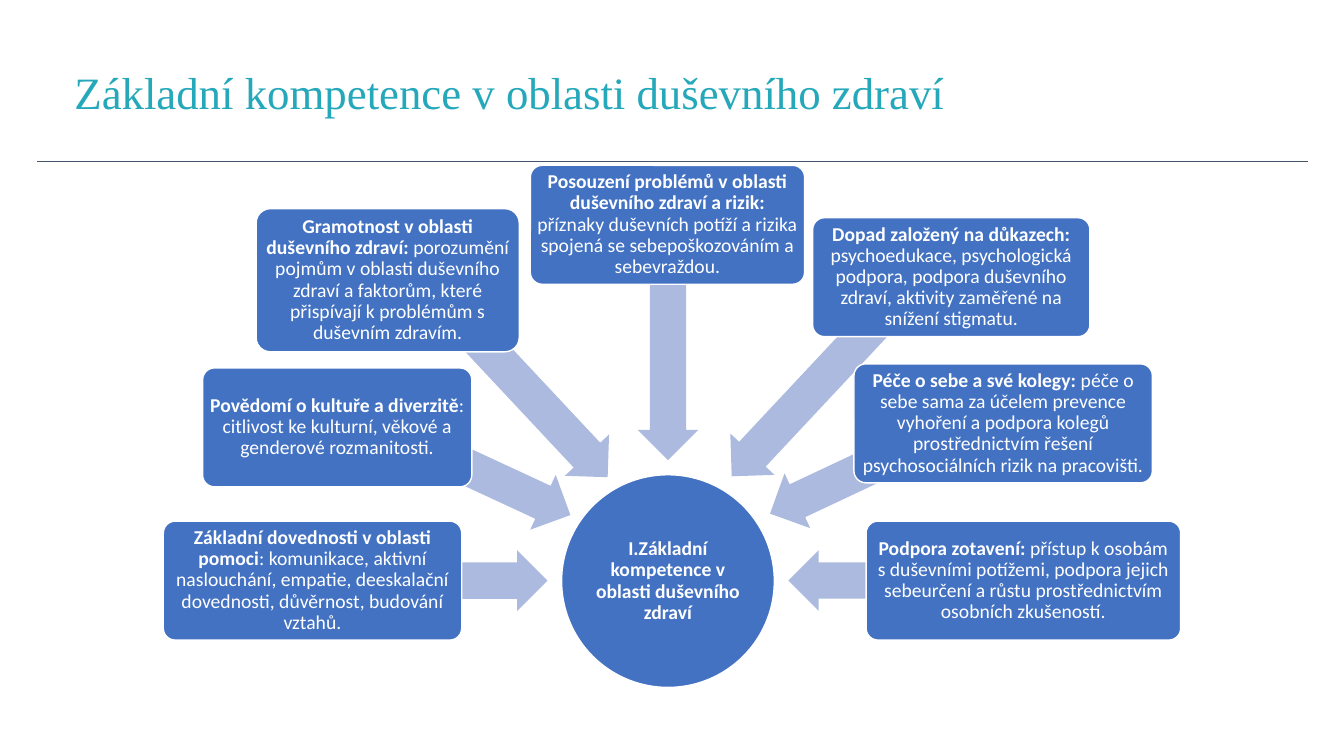
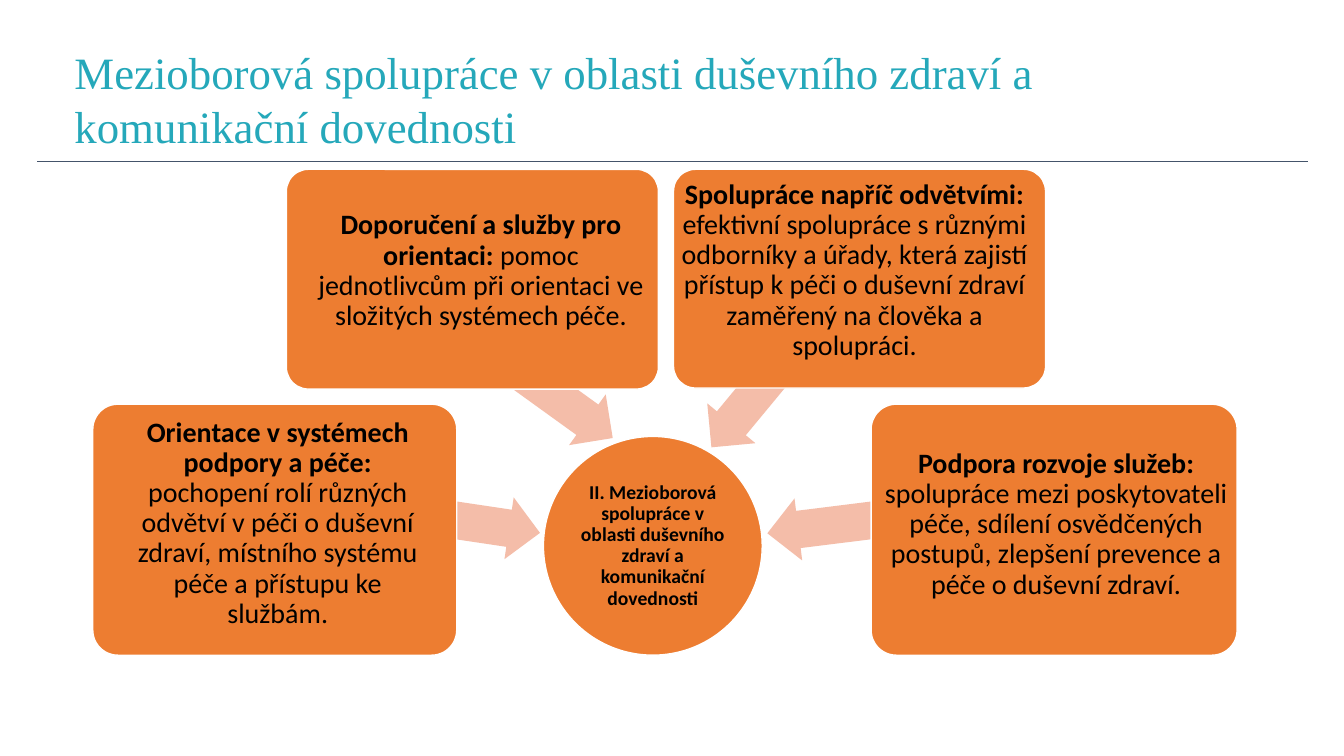
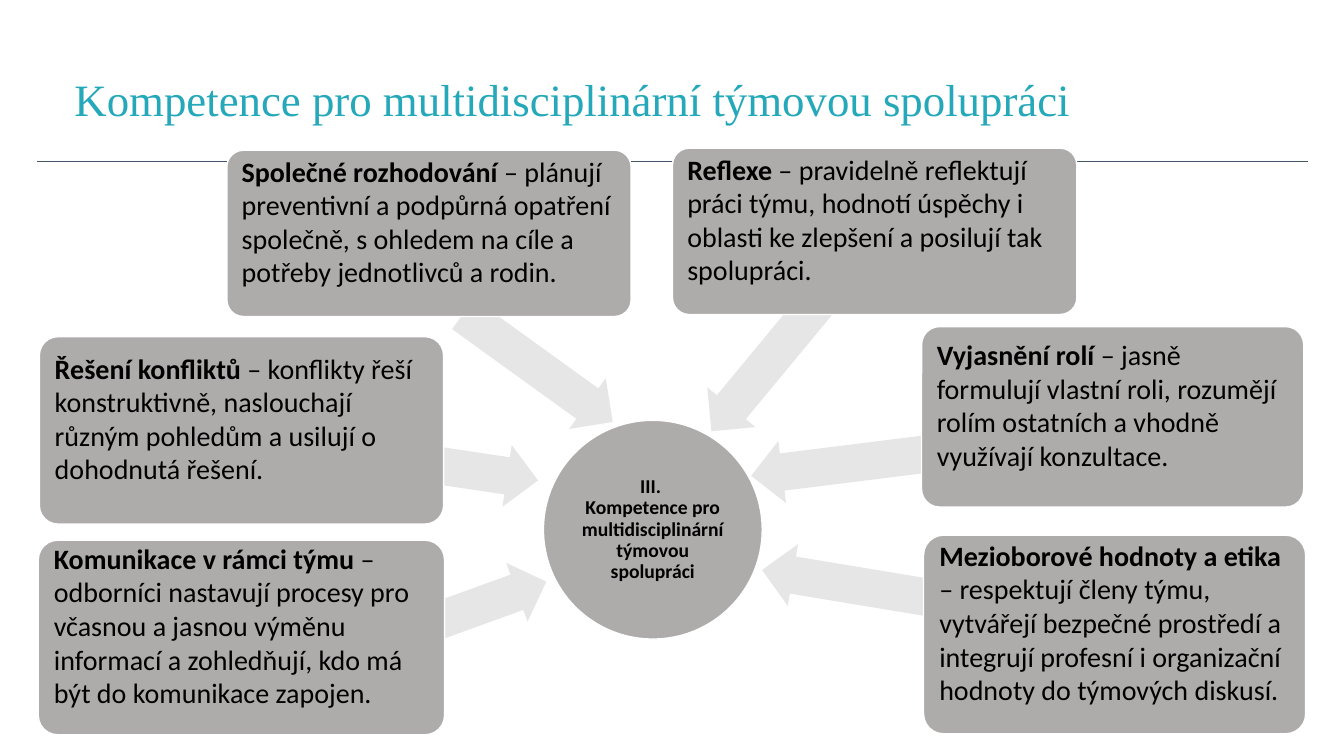
from lxml import etree
from pptx import Presentation
from pptx.dml.color import RGBColor
from pptx.enum import shapes as kinds, text as layout
from pptx.oxml import ns
from pptx.util import Inches, Pt

COLOURS = {
    "title": "25A8BA", "rule": "44546A", "white": "FFFFFF", "black": "000000",
    "blue": "4372C3", "pale blue": "ABBADE",
    "orange": "ED7D31", "pale orange": "F4BDA9",
    "grey": "AEABAB", "pale grey": "E7E6E6",
}
BODY_FONT, TITLE_FONT = "Calibri", "Times New Roman"
SHAPE = kinds.MSO_SHAPE
ALIGN = layout.PP_ALIGN


def colour(name):
    return RGBColor.from_string(COLOURS[name])


def inches(*lengths):
    return [Inches(length) for length in lengths]


def write(shape, *parts, size=14, font=BODY_FONT, ink="black", align=ALIGN.CENTER,
          spacing=0.9, margins=(0.03, 0.03, 0.03, 0.03)):
    """Fill a shape with one paragraph of (wording, bold) parts."""
    frame = shape.text_frame
    frame.word_wrap = True
    frame.vertical_anchor = layout.MSO_ANCHOR.MIDDLE
    (frame.margin_left, frame.margin_top,
     frame.margin_right, frame.margin_bottom) = inches(*margins)
    para = frame.paragraphs[0]
    para.alignment, para.line_spacing = align, spacing
    for wording, bold in parts:
        for number, line in enumerate(wording.split("\n")):
            if number:
                para.add_line_break()
            span = para.add_run()
            span.text = line
            span.font.name, span.font.size, span.font.bold = font, Pt(size), bold
            span.font.color.rgb = colour(ink)


def add_shape(page, kind, box, fill, outlined=True):
    shape = page.shapes.add_shape(kind, *inches(*box))
    shape.shadow.inherit = False
    shape.fill.solid()
    shape.fill.fore_color.rgb = colour(fill)
    if outlined:
        shape.line.color.rgb = colour("white")
        shape.line.width = Pt(1)
    else:
        shape.line.fill.background()
    return shape


def add_header(page, title, top):
    # Rule below the title
    rule = page.shapes.add_connector(kinds.MSO_CONNECTOR.STRAIGHT,
                                     *inches(0.37, 1.6, 12.97, 1.6))
    rule.line.color.rgb = colour("rule")
    rule.line.width = Pt(0.75)
    etree.SubElement(rule._element.spPr, ns.qn("a:effectLst"))
    # Title
    box = page.shapes.add_textbox(*inches(0.64, top, 10.86, 1.05))
    write(box, (title, False), size=32, font=TITLE_FONT, ink="title",
          align=ALIGN.LEFT, spacing=1, margins=(0.1, 0.05, 0.1, 0.05))


def add_arrow(page, left, top, length, turn, thickness, fill):
    arrow = add_shape(page, SHAPE.LEFT_ARROW, (left, top, length, thickness),
                      fill, outlined=False)
    arrow.adjustments[0], arrow.adjustments[1] = 0.6, 0.5
    arrow.rotation = turn


def add_card(page, box, heading, detail, fill, **style):
    card = add_shape(page, SHAPE.ROUNDED_RECTANGLE, box, fill)
    card.adjustments[0] = 0.1
    write(card, (heading, True), (detail, False), **style)


def add_wheel_slide(deck, title, title_top, hub, hub_text, tone, thickness, spokes,
                    ink="black", **style):
    """Cards around a circle, each with an arrow that points at it."""
    page = deck.slides.add_slide(deck.slide_layouts[6])
    add_header(page, title, title_top)
    # Hub
    left, top, diameter = hub
    circle = add_shape(page, SHAPE.OVAL, (left, top, diameter, diameter), tone)
    write(circle, (hub_text, True), ink=ink, margins=(0.01,) * 4)
    # Spokes: each arrow lies behind its card
    for arrow, box, heading, detail, *margins in spokes:
        add_arrow(page, *arrow, thickness, "pale " + tone)
        card_style = dict(style, margins=margins[0]) if margins else style
        add_card(page, box, heading, detail, tone, ink=ink, **card_style)


# Spokes: arrow (left, top, length, turn), card box, heading, detail, own margins
BASIC = [
    ((3.1, 5.46, 2.33, 180), (1.62, 5.17, 2.96, 1.18),
     "Základní dovednosti v oblasti pomoci",
     ": komunikace, aktivní naslouchání, empatie, deeskalační dovednosti, "
     "důvěrnost, budování vztahů."),
    ((3.35, 4.3, 2.42, 204.9), (2.01, 3.65, 2.67, 1.18),
     "Povědomí o kultuře a diverzitě",
     ": citlivost ke kulturní, věkové a genderové rozmanitosti."),
    ((3.62, 3.39, 2.86, 226.9), (2.54, 2.07, 2.61, 1.42),
     "Gramotnost v oblasti duševního zdraví:",
     " porozumění pojmům v oblasti duševního zdraví a faktorům, které "
     "přispívají k problémům s duševním zdravím."),
    ((5.46, 3.1, 2.33, 270), (5.26, 1.64, 2.72, 1.18),
     "Posouzení problémů v oblasti duševního zdraví a rizik:",
     " příznaky duševních potíží a rizika spojená se sebepoškozováním a "
     "sebevraždou."),
    ((6.8, 3.37, 2.89, 313.1), (8.06, 2.16, 2.75, 1.18),
     "Dopad založený na důkazech:",
     " psychoedukace, psychologická podpora, podpora duševního zdraví, "
     "aktivity zaměřené na snížení stigmatu."),
    ((7.52, 4.27, 2.47, 334.8), (8.47, 3.61, 2.96, 1.18),
     "Péče o sebe a své kolegy:",
     " péče o sebe sama za účelem prevence vyhoření a podpora kolegů "
     "prostřednictvím řešení psychosociálních rizik na pracovišti."),
    ((7.82, 5.46, 2.33, 0), (8.59, 5.17, 3.12, 1.18),
     "Podpora zotavení:",
     " přístup k osobám s duševními potížemi, podpora jejich sebeurčení a "
     "růstu prostřednictvím osobních zkušeností."),
]
COOPERATION = [
    ((2.71, 4.78, 2.66, 188.5), (0.92, 4.01, 3.61, 2.49),
     "Orientace v systémech podpory a péče:",
     " pochopení rolí různých odvětví v péči o duševní zdraví, místního "
     "systému péče a přístupu ke službám.", (0.28, 0, 0.22, 0.12)),
    ((4.42, 3.5, 1.83, 215.8), (2.84, 1.68, 3.69, 2.18),
     "Doporučení a služby pro orientaci:",
     " pomoc jednotlivcům při orientaci ve složitých systémech péče.",
     (0.19, 0, 0.02, 0.16)),
    ((6.69, 3.35, 2.02, 309.6), (6.68, 1.68, 3.69, 2.17),
     "Spolupráce napříč odvětvími:",
     " efektivní spolupráce s různými odborníky a úřady, která zajistí "
     "přístup k péči o duševní zdraví zaměřený na člověka a spolupráci.",
     (0, 0, 0.1, 0.16)),
    ((7.6, 4.81, 2.76, 352.9), (8.64, 4.01, 3.63, 2.49),
     "Podpora rozvoje služeb:",
     " spolupráce mezi poskytovateli péče, sdílení osvědčených postupů, "
     "zlepšení prevence a péče o duševní zdraví.", (0.04, 0, 0, 0.1)),
]
TEAMWORK = [
    ((2.74, 5.93, 2.76, 160.1), (0.38, 5.36, 4.03, 1.93),
     "Komunikace v rámci týmu",
     " – odborníci nastavují procesy pro včasnou a jasnou výměnu informací a "
     "zohledňují, kdo má být do komunikace zapojen."),
    ((7.54, 5.57, 2.76, 9.4), (9.16, 5.31, 3.79, 1.97),
     "Mezioborové hodnoty a etika",
     " – respektují členy týmu, vytvářejí bezpečné prostředí a integrují "
     "profesní i organizační hodnoty do týmových diskusí."),
    ((2.69, 4.26, 2.66, 188.5), (0.39, 3.34, 4.01, 1.86),
     "Řešení konfliktů",
     " – konflikty řeší konstruktivně, naslouchají různým pohledům a usilují "
     "o dohodnutá řešení."),
    ((4.42, 3.34, 1.83, 215.8), (2.25, 1.49, 4.01, 1.65),
     "Společné rozhodování",
     " – plánují preventivní a podpůrná opatření společně, s ohledem na cíle "
     "a potřeby jednotlivců a rodin."),
    ((6.69, 3.19, 2.02, 309.6), (6.67, 1.47, 4.01, 1.65),
     "Reflexe",
     " – pravidelně reflektují práci týmu, hodnotí úspěchy i oblasti ke "
     "zlepšení a posilují tak spolupráci."),
    ((7.44, 4.24, 2.76, 352.9), (9.14, 3.24, 3.79, 1.79),
     "Vyjasnění rolí",
     " – jasně formulují vlastní roli, rozumějí rolím ostatních a vhodně "
     "využívají konzultace."),
]


def main():
    deck = Presentation()
    deck.slide_width, deck.slide_height = inches(13.33, 7.5)
    add_wheel_slide(deck, "Základní kompetence v oblasti duševního zdraví", 0.38,
                    (5.57, 4.71, 2.11),
                    "I.Základní kompetence v oblasti duševního zdraví",
                    "blue", 0.6, BASIC, ink="white")
    add_wheel_slide(deck, "Mezioborová spolupráce v oblasti duševního zdraví a "
                    "komunikační dovednosti", 0.45, (5.39, 4.33, 2.17),
                    "II. Mezioborová spolupráce v oblasti duševního zdraví a "
                    "komunikační dovednosti", "orange", 0.62, COOPERATION, size=20)
    add_wheel_slide(deck, "Kompetence pro multidisciplinární týmovou spolupráci", 0.45,
                    (5.39, 4.17, 2.17),
                    "III. \nKompetence pro multidisciplinární týmovou spolupráci",
                    "grey", 0.62, TEAMWORK, size=20, align=ALIGN.LEFT, spacing=1,
                    margins=(0.1, 0, 0.1, 0.24))
    deck.save("out.pptx")


if __name__ == "__main__":
    main()
